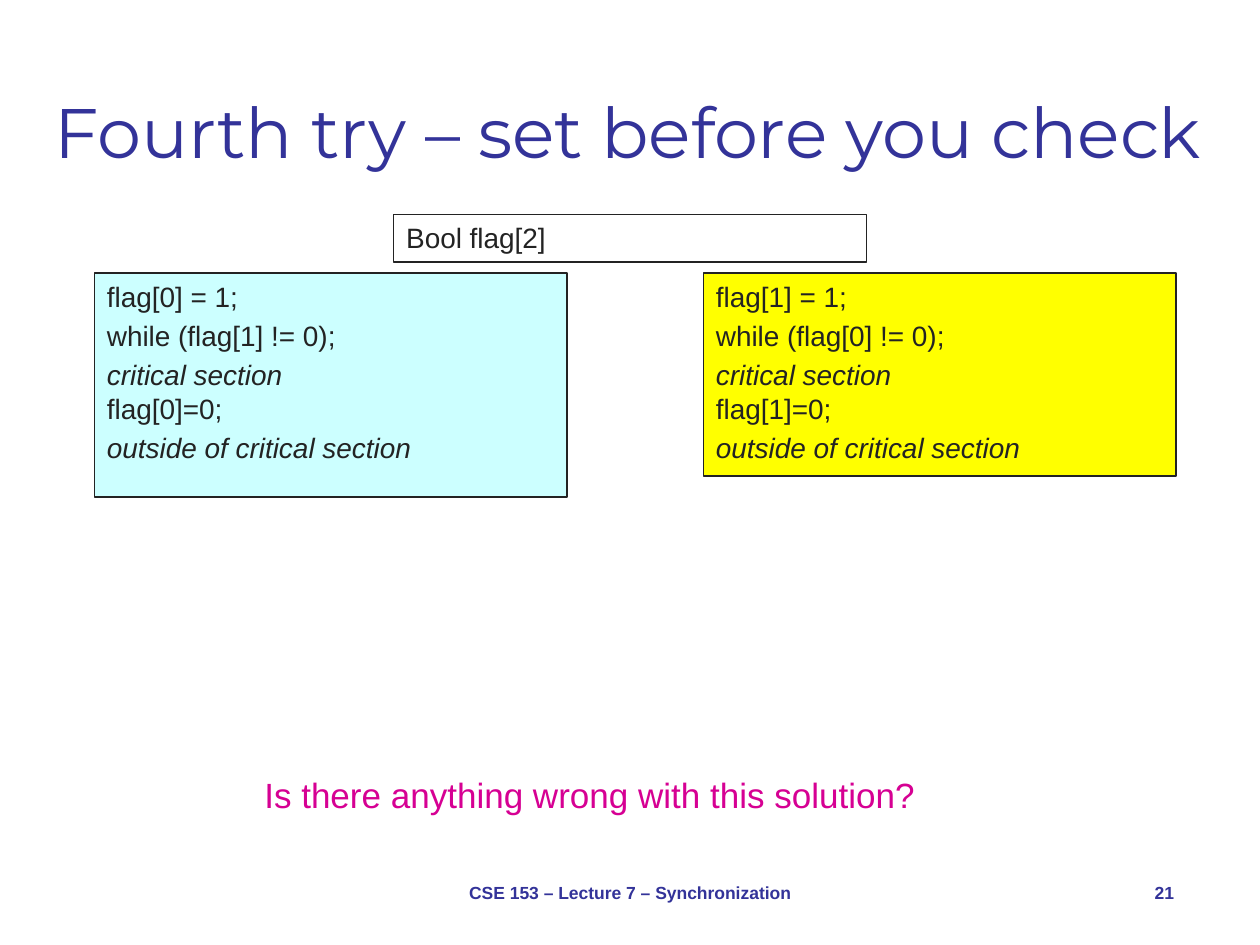
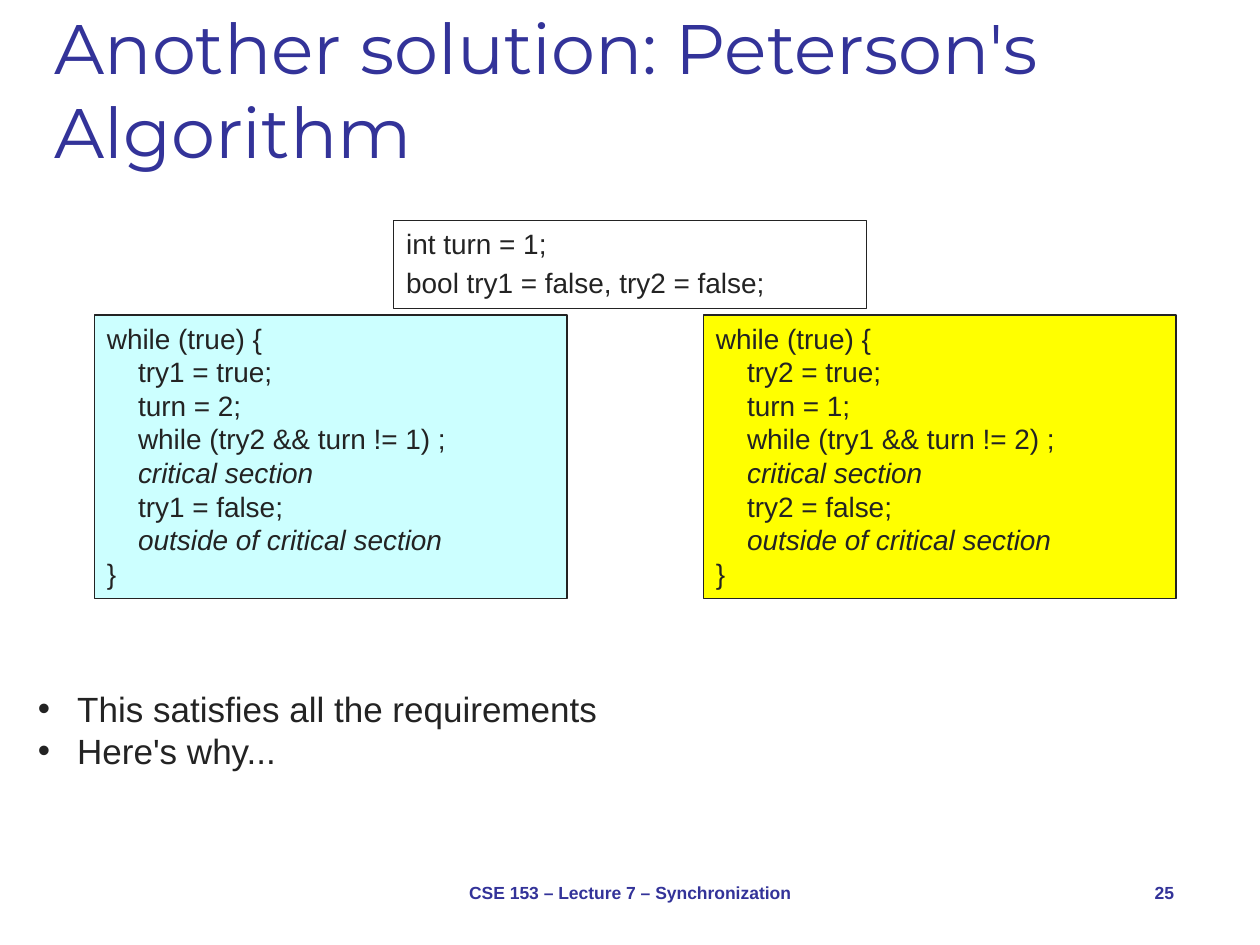
"""Build two lecture slides on mutual exclusion with flags and Peterson's algorithm."""
from pptx import Presentation
from pptx.dml.color import RGBColor
from pptx.enum.shapes import MSO_SHAPE
from pptx.enum.text import MSO_ANCHOR, MSO_AUTO_SIZE, PP_ALIGN
from pptx.util import Pt

NAVY, INK, PINK, CYAN, YELLOW = "333399", "232323", "D60093", "CCFFFF", "FFFF00"
FOOT = "CSE 153 – Lecture 7 – Synchronization"
STEP = 17.8


def paint(part, hue):
    """Give a fill or a font a hex colour."""
    if hasattr(part, "solid"):
        part.solid()
        part.fore_color.rgb = RGBColor.from_string(hue)
    else:
        part.color.rgb = RGBColor.from_string(hue)


def write(shape, box, paras, size, hue, face="Arial", bold=False, gap=0,
          align=PP_ALIGN.LEFT, anchor=MSO_ANCHOR.MIDDLE):
    """Place a shape and fill it with (indent, text) paragraphs."""
    shape.left, shape.top, shape.width, shape.height = [Pt(n) for n in box]
    frame = shape.text_frame
    frame.word_wrap = True
    frame.auto_size = MSO_AUTO_SIZE.NONE
    frame.vertical_anchor = anchor
    for i, (indent, text) in enumerate(paras):
        para = frame.add_paragraph() if i else frame.paragraphs[0]
        para.alignment = align
        para.space_before = Pt(gap if i else 0)
        if face == "Arial":
            para.line_spacing = Pt(size * 1.2)
        if indent:
            props = para._p.get_or_add_pPr()
            props.set("marL", str(Pt(indent)))
            props.set("indent", str(-Pt(indent) if shape.is_placeholder else 0))
        for j, line in enumerate(text.split("\n")):
            if j:
                para.add_line_break()
            run = para.add_run()
            run.text = line
            run.font.name = face
            run.font.size = Pt(size)
            run.font.bold = bold
            run.font.italic = line.endswith("critical section") or line == "critical section"
            paint(run.font, hue)


deck = Presentation()
deck.slide_width, deck.slide_height = Pt(720), Pt(540)

slides = [
    dict(title="Fourth try – set before you check", page="21", layout=5,
         head=[(0, "Bool flag[2]")], top=122.4, tall=27.4,
         base=156, sizes=(128, 116), gap=3.2, pairs=[(0, 1), (1, 0)],
         code=[(0, "flag[{0}] = 1;"), (0, "while (flag[{1}] != 0);"),
               (0, "critical section\nflag[{0}]=0;"),
               (0, "outside of critical section")]),
    dict(title="Another solution: Peterson's Algorithm", page="25", layout=1,
         head=[(0, "int turn = 1;"), (0, "bool try1 = false, try2 = false;")],
         top=126, tall=50.4,
         base=180, sizes=(162, 162), gap=0, pairs=[(1, 2), (2, 1)],
         code=[(0, "while (true) {{"),
               (STEP, "try{0} = true;\nturn = {1};\nwhile (try{1} && turn != {0}) ;\n"
                      "critical section\ntry{0} = false;\noutside of critical section"),
               (0, "}}")]),
]

for data in slides:
    slide = deck.slides.add_slide(deck.slide_layouts[data["layout"]])
    shapes = slide.shapes
    write(shapes.title, (24, 12, 672, 90), [(0, data["title"])], 40, NAVY,
          face="Montserrat", anchor=MSO_ANCHOR.BOTTOM)

    for text, left, wide, align in [(FOOT, 246, 228, PP_ALIGN.CENTER),
                                    (data["page"], 630, 48, PP_ALIGN.RIGHT)]:
        note = shapes.add_textbox(0, 0, 0, 0)
        write(note, (left, 492, wide, 36), [(0, text)], 10, NAVY, bold=True, align=align)

    panels = [(225, data["top"], data["tall"], None, data["head"], 3.2)]
    for left, tall, hue, pair in zip((54, 402), data["sizes"], (CYAN, YELLOW), data["pairs"]):
        code = [(indent, text.format(*pair)) for indent, text in data["code"]]
        panels.append((left, data["base"], tall, hue, code, data["gap"]))
    for left, top, tall, hue, code, gap in panels:
        panel = shapes.add_shape(MSO_SHAPE.RECTANGLE, 0, 0, 0, 0)
        panel.shadow.inherit = False
        if hue:
            paint(panel.fill, hue)
        else:
            panel.fill.background()
        paint(panel.line.fill, INK)
        panel.line.width = Pt(0.75)
        write(panel, (left, top, 270, tall), code, 16, INK, gap=gap, anchor=MSO_ANCHOR.TOP)

quiz = deck.slides[0].shapes.add_textbox(0, 0, 0, 0)
write(quiz, (144, 438, 396, 32), [(0, "Is there anything wrong with this solution?")], 20, PINK)

points = deck.slides[1].placeholders[1]
write(points, (14.4, 389, 682, 55.4),
      [(22.5, "This satisfies all the requirements"), (22.5, "Here's why...")], 20, INK)

deck.save("out.pptx")
